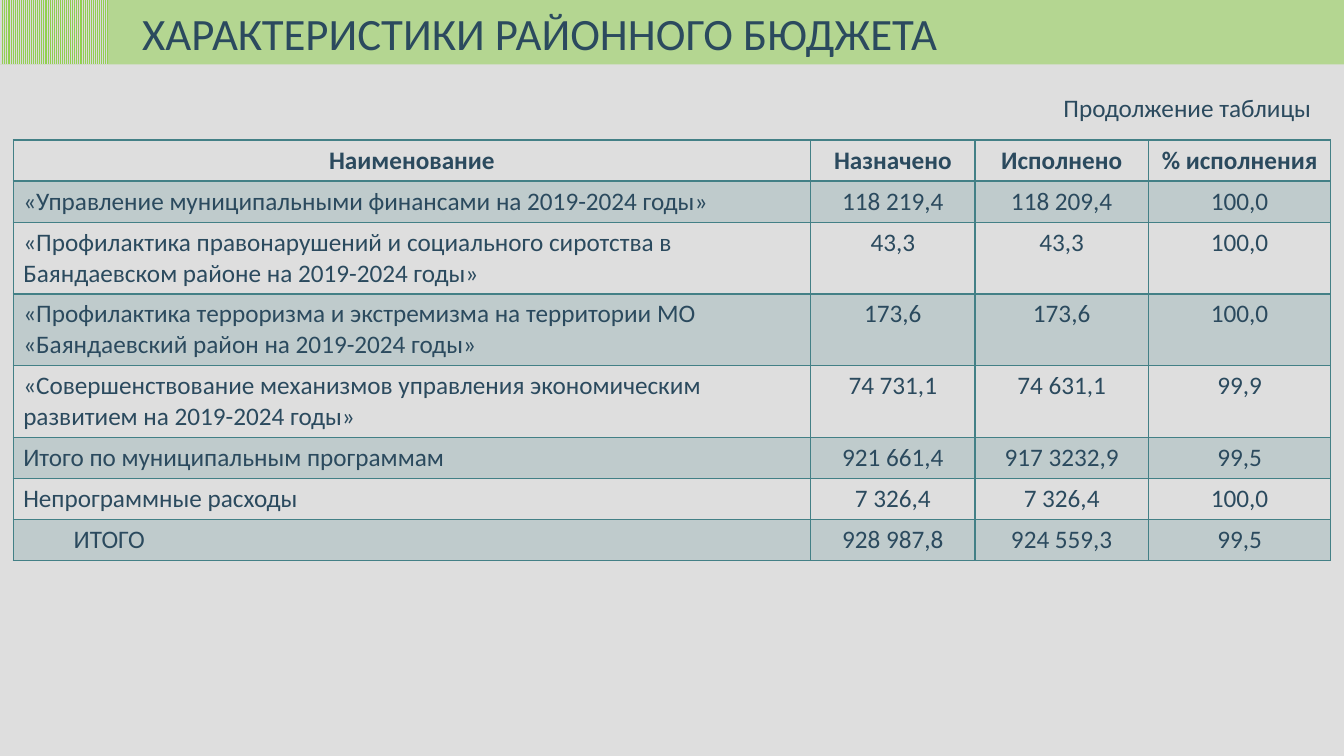
from dataclasses import dataclass

from lxml import etree
from pptx import Presentation
from pptx.dml.color import RGBColor
from pptx.enum.dml import MSO_PATTERN
from pptx.enum.shapes import MSO_SHAPE
from pptx.enum.text import MSO_ANCHOR, PP_ALIGN
from pptx.oxml.ns import qn
from pptx.util import Inches, Pt

RECT = MSO_SHAPE.RECTANGLE
STRIPES = MSO_PATTERN.LIGHT_VERTICAL
MIDDLE = MSO_ANCHOR.MIDDLE
LEFT, CENTER = PP_ALIGN.LEFT, PP_ALIGN.CENTER


@dataclass(frozen=True)
class Theme:
    """Colours, font and type sizes of the slide."""
    font: str = "Calibri"
    ink: str = "2B4A5E"
    back: str = "DEDEDE"
    green: str = "92D050"
    grey: str = "D9D9D9"
    teal: str = "438086"
    title: int = 32
    body: int = 18


THEME = Theme()
COLS = (60.52, 12.47, 13.16, 13.85)
HEAD = ("Наименование", "Назначено", "Исполнено", "% исполнения")
ROWS = (
    ("«Управление муниципальными финансами на 2019-2024 годы»",
     "118 219,4", "118 209,4", "100,0"),
    ("«Профилактика правонарушений и социального сиротства в "
     "Баяндаевском районе на 2019-2024 годы»", "43,3", "43,3", "100,0"),
    ("«Профилактика терроризма и экстремизма на территории МО "
     "«Баяндаевский район на 2019-2024 годы»", "173,6", "173,6", "100,0"),
    ("«Совершенствование механизмов управления экономическим "
     "развитием на 2019-2024 годы»", "74 731,1", "74 631,1", "99,9"),
    ("Итого по муниципальным программам", "921 661,4", "917 3232,9", "99,5"),
    ("Непрограммные расходы", "7 326,4", "7 326,4", "100,0"),
    ("ИТОГО", "928 987,8", "924 559,3", "99,5"),
)
LINES = (1, 1, 2, 2, 2, 1, 1, 1)


def part(box, x, y, w, h):
    """Return the part of a box given in per cent of its size."""
    left, top, width, height = box
    return (int(left + width * x / 100), int(top + height * y / 100),
            int(width * w / 100), int(height * h / 100))


def write(frame, text, size, align=LEFT, bold=False):
    """Set one paragraph of text and format it."""
    frame.text = text
    para = frame.paragraphs[0]
    para.alignment = align
    for run in para.runs:
        font = run.font
        font.name, font.size, font.bold = THEME.font, Pt(size), bold
        font.color.rgb = RGBColor.from_string(THEME.ink)
    return para


def tint(fill, owner, color, alpha):
    """Fill with a colour at an opacity in per cent."""
    fill.solid()
    fill.fore_color.rgb = RGBColor.from_string(color)
    node = owner.find(f".//{qn('a:solidFill')}/{qn('a:srgbClr')}")
    etree.SubElement(node, qn("a:alpha"), val=str(alpha * 1000))


def block(slide, box):
    """Add a plain rectangle without line or shadow."""
    shape = slide.shapes.add_shape(RECT, *box)
    shape.shadow.inherit = False
    shape.line.fill.background()
    return shape


def header(slide, box):
    """Draw the green band, its striped end and the title."""
    band = block(slide, box)
    tint(band.fill, band.element.spPr, THEME.green, 54)
    title = slide.shapes.title
    title.left, title.top, title.width, title.height = part(box, 9.83, 0, 61.29, 100)
    frame = title.text_frame
    frame.word_wrap = False
    frame.vertical_anchor = MIDDLE
    write(frame, "ХАРАКТЕРИСТИКИ РАЙОННОГО БЮДЖЕТА", THEME.title)
    band.element.addnext(title.element)
    fill = block(slide, part(box, 0, 0, 8.03, 100)).fill
    fill.patterned()
    fill.pattern = STRIPES
    fill.fore_color.rgb = RGBColor.from_string(THEME.green)
    fill.back_color.rgb = RGBColor.from_string(THEME.grey)


def edge(cell, row):
    """Rule the four sides of a cell, heavier below the head."""
    props = cell._tc.get_or_add_tcPr()
    for spot, side in enumerate("LRTB"):
        heavy = (row, side) in ((0, "B"), (1, "T"))
        line = etree.Element(qn(f"a:ln{side}"), w=str(Pt(2 if heavy else 1)))
        paint = etree.SubElement(line, qn("a:solidFill"))
        etree.SubElement(paint, qn("a:srgbClr"), val=THEME.teal)
        props.insert(spot, line)


def budget(slide, box):
    """Draw the budget table, with every second row tinted."""
    data = (HEAD, *ROWS)
    table = slide.shapes.add_table(len(data), len(COLS), *box).table
    table.first_row = table.horz_banding = False
    for col, share in zip(table.columns, COLS):
        col.width = int(box[2] * share / 100)
    sizes = [0.12 + 0.29 * count for count in LINES]
    for r, texts in enumerate(data):
        table.rows[r].height = int(box[3] * sizes[r] / sum(sizes))
        for c, text in enumerate(texts):
            cell = table.cell(r, c)
            align = CENTER if r == 0 or c else LEFT
            write(cell.text_frame, text, THEME.body, align, r == 0)
            if r % 2:
                tint(cell.fill, cell._tc.get_or_add_tcPr(), THEME.teal, 20)
            else:
                cell.fill.background()
            edge(cell, r)
    total = table.cell(len(ROWS), 0).text_frame.paragraphs[0]
    total.level = 1
    total._p.get_or_add_pPr().set("marL", str(Inches(0.5)))


def note(slide, box):
    """Add the line above the table."""
    frame = slide.shapes.add_textbox(*box).text_frame
    frame.word_wrap = False
    write(frame, "Продолжение таблицы", THEME.body)


def main():
    """Build and save the slide."""
    deck = Presentation()
    deck.slide_width, deck.slide_height = Inches(13.33), Inches(7.5)
    slide = deck.slides.add_slide(deck.slide_layouts[5])
    ground = slide.background.fill
    ground.solid()
    ground.fore_color.rgb = RGBColor.from_string(THEME.back)
    page = (0, 0, deck.slide_width, deck.slide_height)
    header(slide, part(page, 0, 0, 100, 8.53))
    budget(slide, part(page, 0.98, 18.53, 98.05, 55.07))
    note(slide, part(page, 78.39, 11.6, 20.18, 5.33))
    deck.save("out.pptx")


if __name__ == "__main__":
    main()
